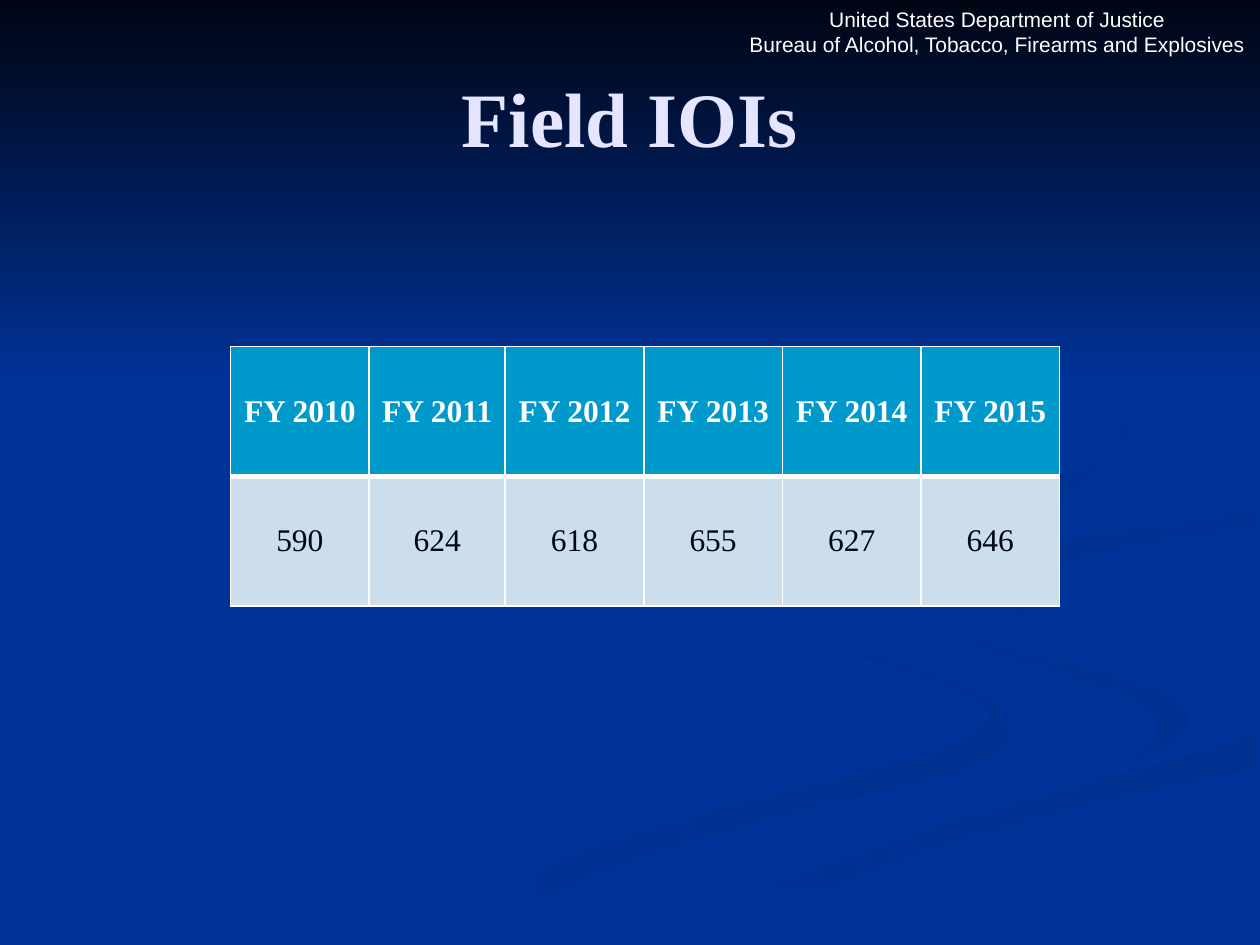
from dataclasses import dataclass

from lxml import etree
from pptx import Presentation
from pptx.dml.color import RGBColor
from pptx.enum.text import MSO_ANCHOR, PP_ALIGN
from pptx.oxml.ns import qn
from pptx.util import Inches, Pt

CENTER = PP_ALIGN.CENTER
MIDDLE, BOTTOM = MSO_ANCHOR.MIDDLE, MSO_ANCHOR.BOTTOM
TITLE_ONLY = 5
CURVE_STEPS = 5


@dataclass(frozen=True)
class Theme:
    """Colours, fonts and type sizes of the slide."""
    background: str = "003399"
    shade: str = "003090"
    night: str = "000514"
    title: str = "E5E5FF"
    white: str = "FFFFFF"
    header_fill: str = "0099CC"
    body_fill: str = "CCDEEC"
    serif: str = "Times New Roman"
    sans: str = "Arial"
    title_size: int = 44
    table_size: int = 18
    agency_size: int = 12


THEME = Theme()

LEFT_INNER = [(5.75, 4.59), (5.7, 4.7), (5.93, 4.91), (6.54, 5.13), (7.41, 5.39),
              (7.86, 5.66), (7.49, 5.94), (6.16, 6.29), (4.58, 6.74), (3, 7.49)]
LEFT_OUTER = [(3.61, 7.49), (4.99, 6.87), (6.51, 6.4), (7.69, 6.09), (8, 5.81),
              (7.81, 5.53), (7.15, 5.28), (6.26, 5.02), (5.83, 4.77), (5.75, 4.59)]
BEND_OUTER = [(7.24, 4.64), (7.45, 4.9), (8.11, 5.15), (8.88, 5.35), (9.35, 5.57),
              (9.43, 5.76), (9.25, 5.93), (8.94, 6.05)]
BEND_INNER = [(8.94, 6.05), (9.18, 5.81), (9, 5.57), (8.38, 5.36), (7.66, 5.12),
              (7.33, 4.88), (7.24, 4.64)]
LOWER_TOP = [(5.03, 7.49), (5.99, 7.06), (6.96, 6.69), (8.31, 6.29), (9.5, 5.98),
             (9.98, 5.81)]
LOWER_BOTTOM = [(9.98, 6.09), (8.21, 6.51), (6.7, 7.02), (5.71, 7.49)]
MAIN_LEFT = BEND_OUTER + [(7.43, 6.43), (5.73, 7.03), (4.77, 7.49)]
MAIN_RIGHT = [(9.98, 5.38), (9.04, 5.19), (8.04, 4.85), (7.81, 4.6)]
MAIN_TOP = [(9.98, 3.87), (8.74, 4.08), (7.7, 4.27), (7.24, 4.64)]
RIGHT_TOP = [(7.81, 4.6), (8.1, 4.37), (8.65, 4.24), (9.33, 4.15), (9.98, 4.02)]
RIGHT_BOTTOM = [(9.98, 4.2), (8.78, 4.39), (8.16, 4.59), (8.05, 4.76), (8.26, 4.96),
                (7.91, 4.78), (7.81, 4.6)]
TOP_OUTER = [(7.62, 2.33), (8.43, 2.75), (8.86, 3.16), (8.92, 3.54), (8.41, 3.96),
             (7.64, 4.17), (6.83, 4.3), (6.14, 4.48), (5.93, 4.7), (6.22, 5)]
TOP_INNER = [(6.22, 5), (5.77, 4.62), (6.05, 4.33), (6.76, 4.14), (7.91, 3.92),
             (8.7, 3.65), (8.88, 3.28), (8.46, 2.79), (7.62, 2.33)]


def write_text(tf, text, *, size, color, font, bold=False, anchor=MIDDLE):
    """Write centred text, one paragraph per line."""
    tf.word_wrap = True
    tf.vertical_anchor = anchor
    for i, line in enumerate(text.split("\n")):
        p = tf.add_paragraph() if i else tf.paragraphs[0]
        p.alignment = CENTER
        r = p.add_run()
        r.text = line
        r.font.size, r.font.name, r.font.bold = Pt(size), font, bold
        r.font.color.rgb = RGBColor.from_string(color)


def spline(knots):
    """Return points of a Catmull-Rom curve through the knots."""
    padded = [knots[0], *knots, knots[-1]]
    points = []
    for span in zip(padded, padded[1:], padded[2:], padded[3:]):
        for step in range(CURVE_STEPS):
            t = step / CURVE_STEPS
            points.append(tuple(
                b + t * (c - a + t * (2 * a - 5 * b + 4 * c - d
                                      + t * (3 * (b - c) + d - a))) / 2
                for a, b, c, d in zip(*span)))
    return points + [knots[-1]]


def add_outline(s, points, start, end, angle):
    """Add a closed outline with a clockwise-angled gradient."""
    first, *rest = [(Inches(x), Inches(y)) for x, y in points]
    builder = s.shapes.build_freeform(*first)
    builder.add_line_segments(rest, close=True)
    sp = builder.convert_to_shape()
    sp.shadow.inherit = False
    sp.line.fill.background()
    sp.fill.gradient()
    sp.fill.gradient_angle = (360 - angle) % 360
    for stop, color, position in zip(sp.fill.gradient_stops, (start, end), (0, 1)):
        stop.color.rgb = RGBColor.from_string(color)
        stop.position = position


def add_ribbon(s, edges, start, end, angle):
    """Add a ribbon bounded by smooth edges."""
    points = [point for edge in edges for point in spline(edge)]
    add_outline(s, points, start, end, angle)


def add_backdrop(s):
    """Fill the background and lay the ribbons and the dark sky on it."""
    blue, shade = THEME.background, THEME.shade
    s.background.fill.solid()
    s.background.fill.fore_color.rgb = RGBColor.from_string(blue)
    add_ribbon(s, (LEFT_INNER, LEFT_OUTER), blue, shade, 0)
    add_ribbon(s, (BEND_OUTER, BEND_INNER), blue, shade, 45)
    add_ribbon(s, (LOWER_TOP, LOWER_BOTTOM), shade, blue, 90)
    add_ribbon(s, (MAIN_LEFT, LOWER_TOP, MAIN_RIGHT, RIGHT_TOP, MAIN_TOP), blue, blue, 0)
    add_ribbon(s, (RIGHT_TOP, RIGHT_BOTTOM), shade, blue, 45)
    add_ribbon(s, (TOP_OUTER, TOP_INNER), shade, blue, 45)
    add_outline(s, [(0, 0), (0, 3.08), (10, 3.08), (10, 0)], THEME.night, blue, 90)


def add_heading(s):
    """Add the agency name and bring the title in front of the backdrop."""
    box = s.shapes.add_textbox(Inches(5.83), Inches(0.06), Inches(4.17), Inches(0.44))
    write_text(box.text_frame, "United States Department of Justice\n"
               "Bureau of Alcohol, Tobacco, Firearms and Explosives",
               size=THEME.agency_size, color=THEME.white, font=THEME.sans, anchor=BOTTOM)
    title = s.shapes.title
    title.left, title.top = Inches(0.5), Inches(0.3)
    title.width, title.height = Inches(9), Inches(1.25)
    write_text(title.text_frame, "Field IOIs", size=THEME.title_size,
               color=THEME.title, font=THEME.serif, bold=True)
    s.shapes.element.append(title.element)


def set_borders(cell, **widths):
    """Draw white cell borders of the given point widths."""
    tcPr = cell._tc.get_or_add_tcPr()
    for i, side in enumerate("LRTB"):
        ln = etree.Element(qn(f"a:ln{side}"), w=str(Pt(widths.get(side, 1))))
        fill = etree.SubElement(ln, qn("a:solidFill"))
        etree.SubElement(fill, qn("a:srgbClr"), val=THEME.white)
        tcPr.insert(i, ln)


def add_staff_table(s, rows):
    """Add the table of yearly head counts."""
    widths = [1.1, 1.08, 1.1, 1.1, 1.1, 1.1]
    table = s.shapes.add_table(len(rows), len(widths), Inches(1.83), Inches(2.75),
                               Inches(sum(widths)), Inches(2.06)).table
    for column, width in zip(table.columns, widths):
        column.width = Inches(width)
    for i, row in enumerate(rows):
        header = i == 0
        for j, text in enumerate(row):
            cell = table.cell(i, j)
            cell.fill.solid()
            cell.fill.fore_color.rgb = RGBColor.from_string(
                THEME.header_fill if header else THEME.body_fill)
            write_text(cell.text_frame, text, size=THEME.table_size, font=THEME.serif,
                       color=THEME.white if header else THEME.night, bold=header)
            cell.vertical_anchor = MIDDLE
            set_borders(cell, **({"B": 3} if header else {"T": 3}))


def main():
    """Build and save the slide."""
    prs = Presentation()
    prs.slide_width, prs.slide_height = Inches(10), Inches(7.5)
    s = prs.slides.add_slide(prs.slide_layouts[TITLE_ONLY])
    add_backdrop(s)
    add_heading(s)
    add_staff_table(s, [[f"FY {year}" for year in range(2010, 2016)],
                        ["590", "624", "618", "655", "627", "646"]])
    prs.save("out.pptx")


if __name__ == "__main__":
    main()
